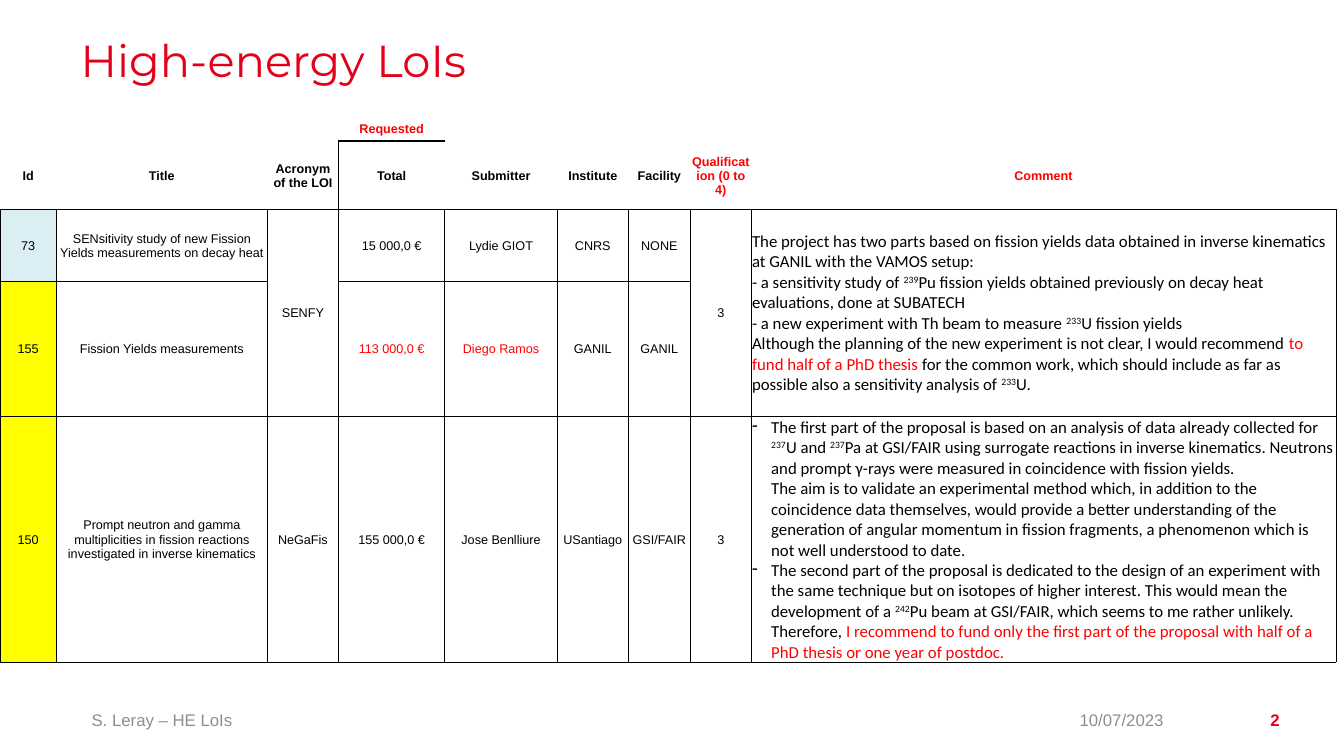
"""Build the slide of high-energy letters of intent with their evaluation table."""
from lxml import etree
from pptx import Presentation
from pptx.dml.color import RGBColor
from pptx.enum.text import MSO_ANCHOR, PP_ALIGN
from pptx.oxml.ns import qn
from pptx.util import Inches, Pt

BLACK = RGBColor(0x00, 0x00, 0x00)
RED = RGBColor(0xFF, 0x00, 0x00)
CRIMSON = RGBColor(0xE5, 0x00, 0x19)
GREY = RGBColor(0x8E, 0x8E, 0x8E)
PALE_BLUE = RGBColor(0xDA, 0xEE, 0xF3)
YELLOW = RGBColor(0xFF, 0xFF, 0x00)

COLUMN_WIDTHS = [0.56, 2.09, 0.71, 1.05, 1.12, 0.7, 0.62, 0.6, 5.8]
ROW_HEIGHTS = [0.24, 0.68, 0.71, 1.34, 2.44]
ROWS = [
    ["", "", "", "Requested", "", "", "", "", ""],
    ["Id", "Title", "Acronym of the LOI", "Total", "Submitter", "Institute",
     "Facility", "Qualification (0 to 4)", "Comment"],
    ["73", "SENsitivity study of new Fission Yields measurements on decay heat",
     "SENFY", "15 000,0 €", "Lydie GIOT", "CNRS", "NONE", "3", ""],
    ["155", "Fission Yields measurements", "", "113 000,0 €", "Diego Ramos",
     "GANIL", "GANIL", "", ""],
    ["150", "Prompt neutron and gamma multiplicities in fission reactions "
     "investigated in inverse kinematics", "NeGaFis", "155 000,0 €",
     "Jose Benlliure", "USantiago", "GSI/FAIR", "3", ""],
]
RED_CELLS = [(0, 3), (1, 7), (1, 8), (3, 3), (3, 4)]
ID_FILLS = {2: PALE_BLUE, 3: YELLOW, 4: YELLOW}
MERGED_COLUMNS = [2, 7, 8]
TOTAL_COLUMN = 3

COMMENTS = {
    2: [[
        ("The project has two parts based on fission yields data obtained in "
         "inverse kinematics at GANIL with the VAMOS setup: \n"
         "- a sensitivity study of ", ""),
        ("239", "super"),
        ("Pu fission yields obtained previously on decay heat evaluations, "
         "done at SUBATECH\n- a new experiment with Th beam to measure ", ""),
        ("233", "super"),
        ("U fission yields \nAlthough the planning of the new experiment is "
         "not clear, I would recommend ", ""),
        ("to fund half of a PhD thesis ", "red"),
        ("for the common work, which should include as far as possible also "
         "a sensitivity analysis of ", ""),
        ("233", "super"),
        ("U.", ""),
    ]],
    4: [[
        ("The first part of the proposal is based on an analysis of data "
         "already collected for ", ""),
        ("237", "super"),
        ("U and ", ""),
        ("237", "super"),
        ("Pa at GSI/FAIR using surrogate reactions in inverse kinematics. "
         "Neutrons and prompt γ-rays were measured in coincidence with "
         "fission yields. \nThe aim is to validate an experimental method "
         "which, in addition to the coincidence data themselves, would provide "
         "a better understanding of the generation of angular momentum in "
         "fission fragments, a phenomenon which is not well understood to "
         "date.", ""),
    ], [
        ("The second part of the proposal is dedicated to the design of an "
         "experiment with the same technique but on isotopes of higher "
         "interest. This would mean the development of a ", ""),
        ("242", "super"),
        ("Pu beam at GSI/FAIR, which seems to me rather unlikely.\n"
         "Therefore, ", ""),
        ("I recommend to fund only the first part of the proposal with half "
         "of a PhD thesis or one year of postdoc.", "red"),
    ]],
}


def style(paragraph, name, size, color, bold=False):
    paragraph.font.name = name
    paragraph.font.size = Pt(size)
    paragraph.font.bold = bold
    paragraph.font.color.rgb = color


def draw_borders(cell, widths):
    properties = cell._tc.get_or_add_tcPr()
    for side in "LRTB":
        width = widths.get(side, 0)
        line = etree.SubElement(properties, qn("a:ln" + side), w=str(Pt(width)))
        if width:
            solid = etree.SubElement(line, qn("a:solidFill"))
            etree.SubElement(solid, qn("a:srgbClr"), val=str(BLACK))
        else:
            etree.SubElement(line, qn("a:noFill"))


deck = Presentation()
deck.slide_width, deck.slide_height = Inches(13.33), Inches(7.5)
page = deck.slides.add_slide(deck.slide_layouts[6])

LEFT, RIGHT = PP_ALIGN.LEFT, PP_ALIGN.RIGHT
TOP, MIDDLE = MSO_ANCHOR.TOP, MSO_ANCHOR.MIDDLE
for text, place, align, anchor, margin, font in [
    ("10/07/2023", (10.53, 6.94, 1.11, 0.4), RIGHT, MIDDLE, 0.1, ("Arial", 12, GREY)),
    ("S. Leray – HE LoIs", (0.81, 6.94, 9.67, 0.4), LEFT, MIDDLE, 0.1, ("Arial", 12, GREY)),
    ("2", (12.03, 6.94, 0.76, 0.4), RIGHT, MIDDLE, 0.1, ("Arial", 12, CRIMSON, True)),
    ("High-energy LoIs", (0.8, 0.34, 11.73, 0.95), LEFT, TOP, 0, ("Montserrat", 32, CRIMSON)),
]:
    frame = page.shapes.add_textbox(*[Inches(length) for length in place]).text_frame
    frame.word_wrap = True
    frame.vertical_anchor = anchor
    frame.margin_left = frame.margin_right = Inches(margin)
    paragraph = frame.paragraphs[0]
    paragraph.text = text
    paragraph.alignment = align
    paragraph.line_spacing = 0.9 if anchor == TOP else 1.0
    style(paragraph, *font)

table = page.shapes.add_table(
    len(ROWS), len(COLUMN_WIDTHS), Inches(0), Inches(1.16),
    Inches(sum(COLUMN_WIDTHS)), Inches(sum(ROW_HEIGHTS))).table
table.first_row = table.horz_banding = False
for column, width in zip(table.columns, COLUMN_WIDTHS):
    column.width = Inches(width)
for row, height in zip(table.rows, ROW_HEIGHTS):
    row.height = Inches(height)

for row, texts in enumerate(ROWS):
    for column, text in enumerate(texts):
        cell = table.cell(row, column)
        cell.vertical_anchor = MIDDLE
        cell.margin_left = cell.margin_right = cell.margin_top = Inches(0.01)
        cell.margin_bottom = Inches(0)

        widths = dict.fromkeys("LRTB", 0.5) if row > 1 else {}
        if row == 1:
            widths["B"] = 0.5
        if row > 0 and column == TOTAL_COLUMN - 1:
            widths["R"] = 1
        if row > 0 and column == TOTAL_COLUMN:
            widths["L"] = 1
        if row < 2 and column == TOTAL_COLUMN:
            widths["B" if row == 0 else "T"] = 1
        draw_borders(cell, widths)
        if column == 0 and row in ID_FILLS:
            cell.fill.solid()
            cell.fill.fore_color.rgb = ID_FILLS[row]
        else:
            cell.fill.background()

        paragraph = cell.text_frame.paragraphs[0]
        if text:
            paragraph.text = text
        else:
            etree.SubElement(paragraph._p, qn("a:endParaRPr"), sz="900")
        paragraph.alignment = PP_ALIGN.CENTER
        style(paragraph, "Arial", 9, RED if (row, column) in RED_CELLS else BLACK, row < 2)

for column in MERGED_COLUMNS:
    table.cell(2, column).merge(table.cell(3, column))

for row, comment in COMMENTS.items():
    frame = table.cell(row, 8).text_frame
    frame.clear()
    for number, pieces in enumerate(comment):
        paragraph = frame.paragraphs[0] if number == 0 else frame.add_paragraph()
        for element in paragraph._p.findall(qn("a:endParaRPr")):
            paragraph._p.remove(element)
        paragraph.alignment = LEFT
        if len(comment) > 1:
            properties = paragraph._p.get_or_add_pPr()
            properties.set("marL", str(Inches(0.19)))
            properties.set("indent", str(Inches(-0.19)))
            for element in properties.findall(qn("a:defRPr")):
                properties.remove(element)
            etree.SubElement(properties, qn("a:buChar"), char="-")
        style(paragraph, "Calibri", 12, BLACK)
        for text, kind in pieces:
            for index, line in enumerate(text.split("\n")):
                if index:
                    paragraph.add_line_break()
                span = paragraph.add_run()
                span.text = line
                if kind == "red":
                    span.font.color.rgb = RED
                elif kind == "super":
                    span._r.get_or_add_rPr().set("baseline", "30000")

deck.save("out.pptx")
